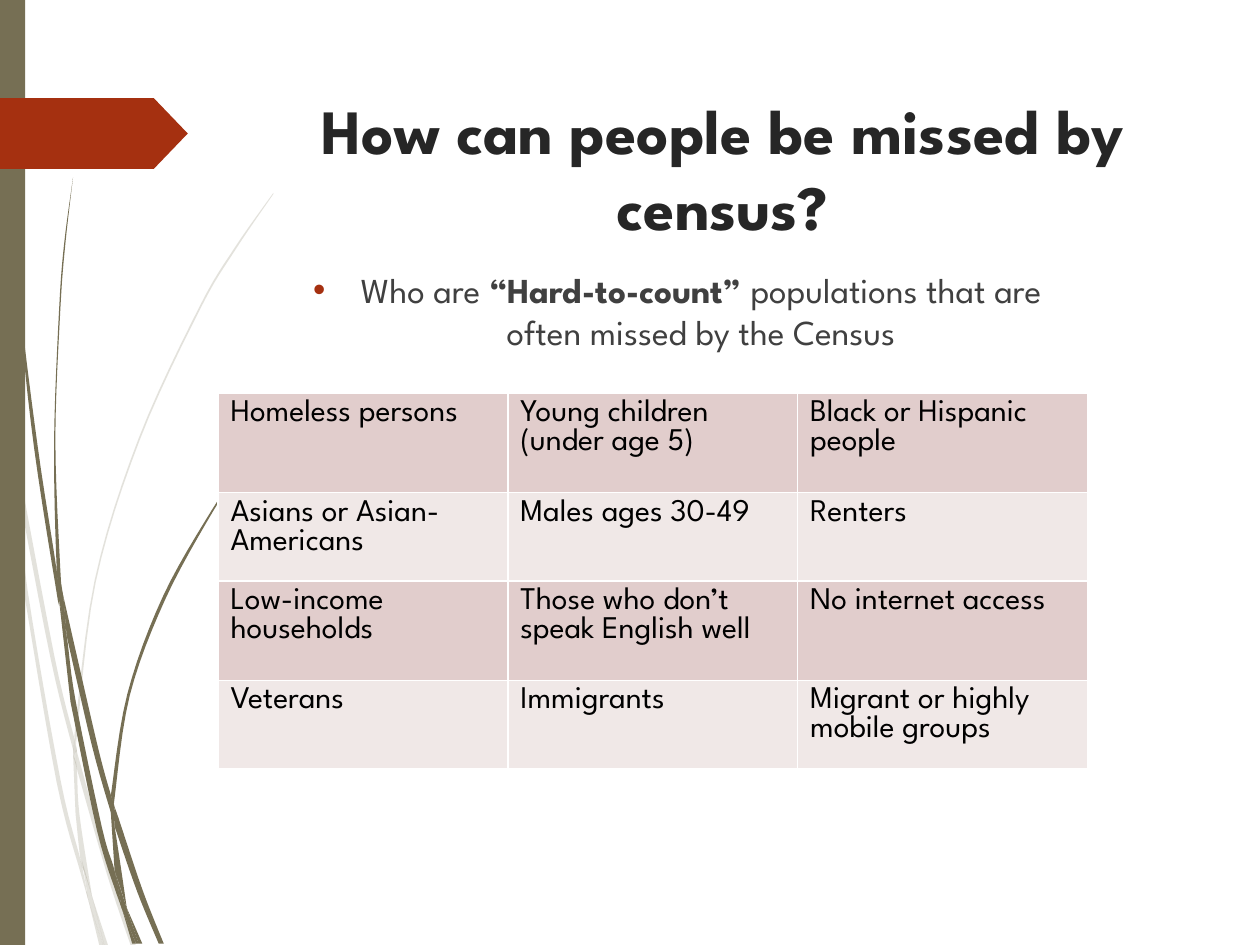
"""Build the slide on people missed by the census."""
from lxml.etree import SubElement
from pptx import Presentation
from pptx.dml.color import RGBColor
from pptx.enum.shapes import MSO_SHAPE as Shape
from pptx.enum.text import MSO_ANCHOR as Anchor, PP_ALIGN as Align
from pptx.oxml.ns import qn
from pptx.util import Inches, Pt

FONT = "League Spartan"
COLORS = {"olive": "766F54", "rust": "A53010", "title": "262626", "body": "404040",
          "cell": "000000", "odd": "E1CDCC", "even": "F0E8E7", "line": "FFFFFF"}
TITLE = [("How can people be missed by census?", True)]
BODY = [("Who are ", False), ("“Hard-to-count”", True),
        (" populations that are often missed by the Census", False)]
GROUPS = [
    ["Homeless persons", "Young children (under age 5)", "Black or Hispanic people"],
    ["Asians or Asian-Americans", "Males ages 30-49", "Renters"],
    ["Low-income households", "Those who don’t speak English well", "No internet access"],
    ["Veterans", "Immigrants", "Migrant or highly mobile groups"],
]
ROW_HEIGHTS = [0.79, 0.56, 0.79, 0.56]
TABLE_LEFT, TABLE_TOP, COLUMN = 1.73, 3.12, 2.3

PALE_BLADES = [
    ([(0, 2.82), (0.06, 3.22), (0.08, 3.5)], [(0.07, 3.44), (0, 2.99)]),
    ([(0.1, 3.45), (0.43, 5.2), (0.59, 5.86)], [(0.59, 5.99), (0.4, 5.22), (0.12, 3.76)]),
    ([(0.61, 5.96), (0.64, 6.07), (0.88, 6.92), (1.08, 7.51)],
     [(1.04, 7.51), (0.85, 6.94), (0.61, 6.1)]),
    ([(0.73, 7.11), (0.86, 7.51)], [(0.83, 7.51)]),
    ([(0.08, 3.5), (0.12, 3.76), (0.22, 4.69), (0.48, 6.19), (0.64, 6.83), (0.7, 7.14)],
     [(0.64, 6.93), (0.45, 6.21), (0.19, 4.7)]),
    ([(0.58, 5.99), (0.61, 6.1), (0.63, 6.46), (0.73, 7.11)],
     [(0.67, 6.92), (0.64, 6.83), (0.6, 6.46)]),
    ([(0.61, 5.96), (0.61, 5.84), (0.76, 4.62), (1.11, 3.49), (1.59, 2.45), (1.87, 1.98),
      (2.17, 1.54)],
     [(2.17, 1.53), (1.86, 1.97), (1.58, 2.44), (1.1, 3.48), (0.75, 4.61), (0.59, 5.84)]),
    ([(0.7, 7.14), (0.82, 7.51)], [(0.79, 7.51)]),
    ([(0.59, 5.86), (0.61, 5.96), (0.61, 6.1)], [(0.58, 5.99)]),
    ([(0.65, 6.83), (0.73, 7.11), (0.83, 7.51)], [(0.82, 7.51), (0.7, 7.14), (0.69, 7.07)]),
]
DARK_BLADES = [
    ([(0.03, 0), (0.04, 0.48), (0.06, 1.09), (0.15, 2.32), (0.3, 3.55), (0.45, 4.53),
      (0.47, 4.81)],
     [(0.46, 4.77), (0.27, 3.55), (0.14, 2.33), (0.05, 1.1), (0.03, 0.48), (0.02, 0)]),
    ([(0.5, 4.72), (0.77, 5.9), (0.88, 6.31)], [(0.88, 6.45), (0.73, 5.92), (0.53, 5.05)]),
    ([(0.91, 6.41), (0.94, 6.49), (1.13, 7.06), (1.3, 7.49)],
     [(1.26, 7.49), (1.09, 7.08), (0.91, 6.56)]),
    ([(0.47, 4.77), (0.53, 5.05), (0.6, 5.56), (0.81, 6.57), (0.91, 6.91), (0.97, 7.22)],
     [(0.92, 7.08), (0.77, 6.59), (0.56, 5.57)]),
    ([(0.5, 4.72), (0.48, 4.53), (0.44, 3.49), (0.48, 2.45), (0.52, 1.93), (0.58, 1.41)],
     [(0.58, 1.41), (0.51, 1.93), (0.47, 2.45), (0.43, 3.49), (0.45, 4.49), (0.49, 4.72)]),
    ([(1, 7.19), (1.13, 7.49)], [(1.1, 7.49)]),
    ([(0.45, 4.49), (0.5, 4.72), (0.53, 5.05)], [(0.47, 4.77), (0.45, 4.53)]),
    ([(0.91, 6.41), (0.91, 6.33), (1.03, 5.52), (1.31, 4.76), (1.69, 4.06), (1.91, 3.74),
      (2.16, 3.44)],
     [(2.15, 3.44), (1.91, 3.73), (1.68, 4.05), (1.29, 4.74), (1.01, 5.51), (0.88, 6.31)]),
    ([(0.97, 7.22), (1.08, 7.49)], [(1.05, 7.49)]),
    ([(0.88, 6.45), (0.91, 6.56), (1, 7.16), (1, 7.19)], [(0.96, 7.06), (0.91, 6.91)]),
    ([(0.88, 6.31), (0.91, 6.41), (0.91, 6.56)], [(0.88, 6.45)]),
    ([(0.91, 6.91), (1, 7.19), (1.1, 7.49)], [(1.08, 7.49), (0.97, 7.22), (0.96, 7.17)]),
]


def color(name):
    return RGBColor.from_string(COLORS[name])


def smooth(edge, steps=6):
    """Return points on a Catmull-Rom curve through an edge."""
    ends = [edge[0], *edge, edge[-1]]
    curve = [edge[0]]
    for a, b, c, d in zip(ends, ends[1:], ends[2:], ends[3:]):
        for step in range(1, steps + 1):
            t = step / steps
            curve.append(tuple(
                q + t * (r - p + t * (2 * p - 5 * q + 4 * r - s + t * (3 * (q - r) + s - p))) / 2
                for p, q, r, s in zip(a, b, c, d)))
    return curve


def paint(shape, name, alpha=None):
    shape.shadow.inherit = False
    shape.fill.solid()
    shape.fill.fore_color.rgb = color(name)
    shape.line.fill.background()
    if alpha:
        tint = shape.fill._xPr.find(".//" + qn("a:srgbClr"))
        SubElement(tint, qn("a:alpha"), val=str(alpha * 1000))


def add_blade(page, edges, alpha=None):
    outline = [(Inches(x), Inches(y)) for edge in edges for x, y in smooth(edge)]
    builder = page.shapes.build_freeform(*outline[0], scale=1)
    builder.add_line_segments(outline[1:], close=True)
    paint(builder.convert_to_shape(), "olive", alpha)


def write(frame, spans, size, ink, align=Align.LEFT, before=0):
    frame.word_wrap = True
    para = frame.paragraphs[0]
    para.alignment = align
    para.space_before = Pt(before)
    for text, bold in spans:
        span = para.add_run()
        span.text = text
        span.font.name, span.font.size, span.font.bold = FONT, Pt(size), bold
        span.font.color.rgb = color(ink)
    return para


def add_text(page, place, spans, **style):
    box = page.shapes.add_textbox(*map(Inches, place))
    box.text_frame.vertical_anchor = Anchor.TOP
    return write(box.text_frame, spans, align=Align.CENTER, **style)


def add_bullet(para):
    props = para._p.get_or_add_pPr()
    props.set("marL", str(Inches(0.38)))
    props.set("indent", str(Inches(-0.38)))
    SubElement(SubElement(props, qn("a:buClr")), qn("a:srgbClr"), val=COLORS["rust"])
    SubElement(props, qn("a:buFont"), typeface="Arial")
    SubElement(props, qn("a:buChar"), char="•")


def add_borders(cell):
    props = cell._tc.get_or_add_tcPr()
    for index, side in enumerate(("lnL", "lnR", "lnT", "lnB")):
        line = props.makeelement(qn("a:" + side), {"w": str(Pt(1))})
        SubElement(SubElement(line, qn("a:solidFill")), qn("a:srgbClr"), val=COLORS["line"])
        props.insert(index, line)


def add_groups(page):
    rows, columns = len(GROUPS), len(GROUPS[0])
    table = page.shapes.add_table(rows, columns, Inches(TABLE_LEFT), Inches(TABLE_TOP),
                                  Inches(COLUMN * columns), Inches(sum(ROW_HEIGHTS))).table
    for column in table.columns:
        column.width = Inches(COLUMN)
    for r, (names, height) in enumerate(zip(GROUPS, ROW_HEIGHTS)):
        table.rows[r].height = Inches(height)
        for c, name in enumerate(names):
            cell = table.cell(r, c)
            cell.fill.solid()
            cell.fill.fore_color.rgb = color("even" if r % 2 else "odd")
            add_borders(cell)
            write(cell.text_frame, [(name, False)], size=18, ink="cell")


def main():
    deck = Presentation()
    deck.slide_width, deck.slide_height = Inches(10), Inches(7.5)
    page = deck.slides.add_slide(deck.slide_layouts[6])
    for edges in PALE_BLADES:
        add_blade(page, edges, alpha=20)
    for edges in DARK_BLADES:
        add_blade(page, edges)
    bar = page.shapes.add_shape(Shape.RECTANGLE, 0, 0, Inches(0.2), deck.slide_height)
    paint(bar, "olive")
    arrow = page.shapes.add_shape(Shape.PENTAGON, 0, Inches(0.78), Inches(1.49), Inches(0.56))
    arrow.adjustments[0] = 0.48
    paint(arrow, "rust")
    add_text(page, (2.13, 0.68, 7.21, 1.4), TITLE, size=36, ink="title")
    add_bullet(add_text(page, (2.13, 2.08, 6.49, 3.39), BODY, size=20, ink="body", before=10))
    add_groups(page)
    deck.save("out.pptx")


if __name__ == "__main__":
    main()
